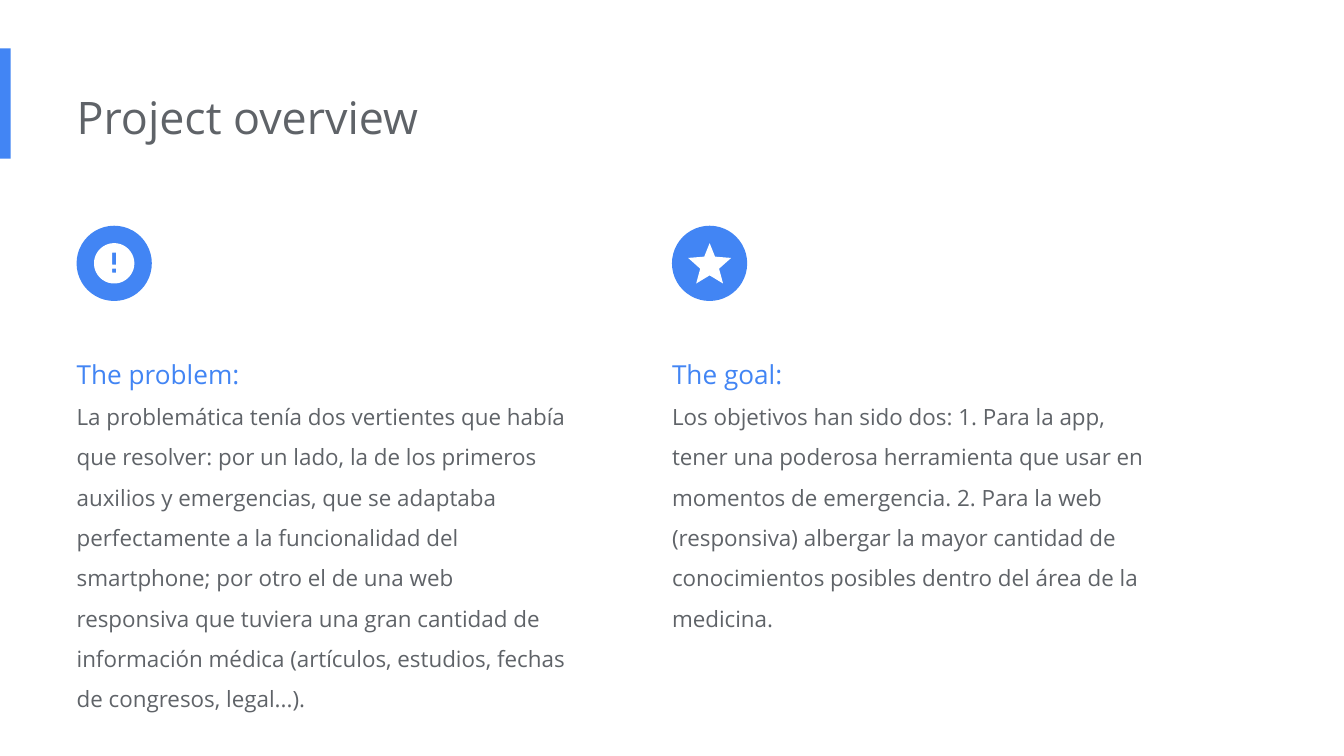
from math import cos, pi, sin

from lxml.etree import SubElement
from pptx import Presentation
from pptx.dml.color import RGBColor
from pptx.enum.shapes import MSO_SHAPE as Shape
from pptx.enum.text import MSO_ANCHOR as Anchor, MSO_AUTO_SIZE as AutoSize, PP_ALIGN as Align
from pptx.oxml.ns import qn
from pptx.util import Inches, Pt

BLUE = RGBColor(0x42, 0x85, 0xF4)
GRAY = RGBColor(0x5F, 0x63, 0x68)
WHITE = RGBColor(0xFF, 0xFF, 0xFF)
FONT = "Open Sans"

# Grid, in inches; the slide is 16:9
WIDTH = 10
HEIGHT = WIDTH * 9 / 16
LEFT, COLUMN_STEP, COLUMN_WIDTH = 0.57, 4.43, 3.77
ICON_TOP, ICON_SIZE = 1.68, 0.56
TEXT_TOP = 2.45

FRAME_FORMAT = {
    "margin_left": 0, "margin_right": Inches(0.1),
    "margin_top": Inches(0.1), "margin_bottom": Inches(0.1),
    "word_wrap": True, "vertical_anchor": Anchor.TOP,
    "auto_size": AutoSize.SHAPE_TO_FIT_TEXT,
}

COLUMNS = [
    ("The problem:",
     "La problemática tenía dos vertientes que había que resolver: por un lado, "
     "la de los primeros auxilios y emergencias, que se adaptaba perfectamente a "
     "la funcionalidad del smartphone; por otro el de una web responsiva que "
     "tuviera una gran cantidad de información médica (artículos, estudios, "
     "fechas de congresos, legal...).", 2.94),
    ("The goal:",
     "Los objetivos han sido dos: 1. Para la app, tener una poderosa herramienta "
     "que usar en momentos de emergencia. 2. Para la web (responsiva) albergar "
     "la mayor cantidad de conocimientos posibles dentro del área de la "
     "medicina.", 2.34),
]


def set_all(target, values):
    for name, value in values.items():
        setattr(target, name, value)


def paint(shape, color):
    shape.shadow.inherit = False
    shape.fill.solid()
    shape.fill.fore_color.rgb = color
    shape.line.fill.background()


def add_preset(slide, kind, box, color):
    shape = slide.shapes.add_shape(kind, *map(Inches, box))
    paint(shape, color)


def add_outline(slide, contours, color):
    """Draw closed contours, given in inches, as one shape."""
    # The builder rounds its coordinates, so it is fed whole EMU
    first, *others = [[(Inches(x), Inches(y)) for x, y in contour]
                      for contour in contours]
    builder = slide.shapes.build_freeform(*first[0], scale=1.0)
    builder.add_line_segments(first[1:], close=True)
    for contour in others:
        builder.move_to(*contour[0])
        builder.add_line_segments(contour[1:], close=True)
    paint(builder.convert_to_shape(), color)


def fill_placeholder(placeholder, box, lines, line_spacing):
    """Place the box and write (text, size, color) lines in it."""
    names = ("left", "top", "width", "height")
    set_all(placeholder, dict(zip(names, map(Inches, box))))
    frame = placeholder.text_frame
    set_all(frame, FRAME_FORMAT)
    frame.text = "\n".join(text for text, _, _ in lines)
    for paragraph, (_, size, color) in zip(frame.paragraphs, lines):
        set_all(paragraph, {"alignment": Align.LEFT, "line_spacing": line_spacing,
                            "space_before": Pt(0), "space_after": Pt(0)})
        properties = paragraph._p.get_or_add_pPr()
        properties.set("marL", "0")
        properties.set("indent", "0")
        SubElement(properties, qn("a:buNone"))
        font = paragraph.runs[0].font
        set_all(font, {"name": FONT, "size": Pt(size)})
        font.color.rgb = color


def add_alert(slide, center_x, center_y):
    """A disc with an exclamation mark cut out of it."""
    radius, half, steps = 0.15, 0.015, 72
    angles = [2 * pi * step / steps for step in range(steps)]
    disc = [(center_x + radius * cos(angle), center_y + radius * sin(angle))
            for angle in angles]
    marks = [[(center_x + half, center_y + top), (center_x + half, center_y + bottom),
              (center_x - half, center_y + bottom), (center_x - half, center_y + top)]
             for top, bottom in ((-0.08, 0.01), (0.04, 0.07))]
    add_outline(slide, [disc, *marks], WHITE)


def add_star(slide, center_x, center_y):
    """A five-pointed star, mirrored about its vertical axis."""
    right = [(0, -0.15), (0.04, -0.05), (0.16, -0.04),
             (0.07, 0.04), (0.1, 0.15), (0, 0.09)]
    left = [(-x, y) for x, y in right[-2:0:-1]]
    add_outline(slide, [[(center_x + x, center_y + y) for x, y in right + left]], WHITE)


def add_header(slide):
    add_preset(slide, Shape.RECTANGLE, (0, 0.36, 0.08, 0.82), BLUE)
    fill_placeholder(slide.shapes.title, (LEFT, 0.57, 6.73, 0.6),
                     [("Project overview", 24, GRAY)], 1.0)


def add_column(slide, placeholder, left, content, add_symbol):
    heading, body, height = content
    fill_placeholder(placeholder, (left, TEXT_TOP, COLUMN_WIDTH, height),
                     [(heading, 14, BLUE), (body, 12, GRAY)], 1.5)
    add_preset(slide, Shape.OVAL, (left, ICON_TOP, ICON_SIZE, ICON_SIZE), BLUE)
    add_symbol(slide, left + ICON_SIZE / 2, ICON_TOP + ICON_SIZE / 2)


def main():
    presentation = Presentation()
    set_all(presentation, {"slide_width": Inches(WIDTH), "slide_height": Inches(HEIGHT)})
    two_content = presentation.slide_layouts[3]
    slide = presentation.slides.add_slide(two_content)
    add_header(slide)
    # Problem and goal, side by side
    for index, (content, add_symbol) in enumerate(zip(COLUMNS, (add_alert, add_star))):
        add_column(slide, slide.placeholders[index + 1], LEFT + index * COLUMN_STEP,
                   content, add_symbol)
    presentation.save("out.pptx")


if __name__ == "__main__":
    main()
